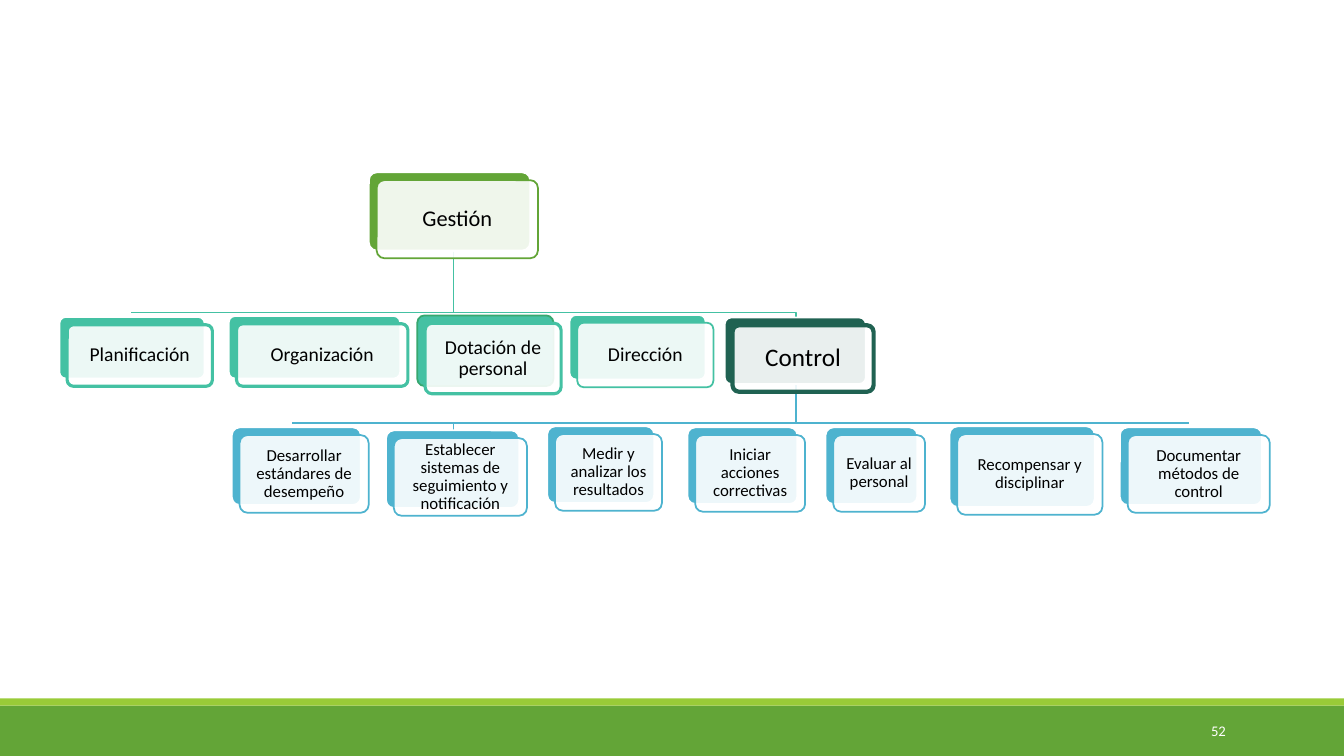
from lxml import etree
from pptx import Presentation
from pptx import util as u
from pptx.dml.color import RGBColor
from pptx.enum import shapes, text
from pptx.oxml import ns

WHITE = RGBColor(0xFF, 0xFF, 0xFF)
BLACK = RGBColor(0x00, 0x00, 0x00)
GREEN = RGBColor(0x63, 0xA5, 0x37)
LIME = RGBColor(0x99, 0xCB, 0x38)
TEAL = RGBColor(0x44, 0xC1, 0xA3)
DARK_TEAL = RGBColor(0x20, 0x62, 0x52)
EMERALD = RGBColor(0x37, 0xA7, 0x6F)
BLUE = RGBColor(0x4E, 0xB3, 0xCF)

# The slide is a grid of square steps, ten to the inch.
STEP = u.Inches(0.1)
COLUMNS, ROWS = 133.33, 75
CARD_SHIFT = 0.77  # offset of the front card from the back card
BEND_RISE = 0.65   # height of a branch's bend above its child

deck = Presentation()
deck.slide_width = round(COLUMNS * STEP)
deck.slide_height = ROWS * STEP
page = deck.slides.add_slide(deck.slide_layouts[6])


def add_block(kind, left, top, width, height, fill):
    """Add a filled shape without outline or shadow, measured in grid steps."""
    block = page.shapes.add_shape(
        kind, *(round(n * STEP) for n in (left, top, width, height)))
    block.shadow.inherit = False
    block.fill.solid()
    block.fill.fore_color.rgb = fill
    block.line.fill.background()
    return block


def write(box, words, size, color, align, inset):
    """Write one vertically centred paragraph in a shape."""
    frame = box.text_frame
    frame.word_wrap = True
    frame.vertical_anchor = text.MSO_ANCHOR.MIDDLE
    frame.margin_left = frame.margin_right = u.Inches(inset)
    frame.margin_top = frame.margin_bottom = u.Inches(inset)
    para = frame.paragraphs[0]
    para.alignment = align
    para.line_spacing = 0.9
    span = para.add_run()
    span.text = words
    span.font.name = "Calibri"
    span.font.size = u.Pt(size)
    span.font.color.rgb = color


# Footer band with the page number
for top, height, color in ((70, 5, GREEN), (69.3, 0.7, LIME)):
    add_block(shapes.MSO_SHAPE.RECTANGLE, 0, top, COLUMNS, height, color)
number = page.shapes.add_textbox(
    *(round(n * STEP) for n in (108.3, 70.6, 14.3, 4)))
write(number, "52", 10.5, WHITE, text.PP_ALIGN.RIGHT, 0.1)

# Cards: words, left, top, width, height, colour, back outline, front line width
root = ("Gestión", 36.6, 17.1, 16, 7.75, GREEN, WHITE, 1.25)
functions = [
    ("Planificación", 5.9, 31.45, 14.4, 6.1, TEAL, WHITE, 2.25),
    ("Organización", 22.7, 31.35, 17, 6.2, TEAL, WHITE, 2.25),
    ("Dotación de personal", 41.4, 31.3, 13.5, 7, TEAL, EMERALD, 2.25),
    ("Dirección", 56.5, 31.25, 13.5, 6.4, TEAL, WHITE, 1.25),
]
control = ("Control", 71.9, 31.5, 14, 6.6, DARK_TEAL, WHITE, 3)
tasks = [
    (words, left, top, width, height, BLUE, WHITE, 1.25)
    for words, left, top, width, height in (
        ("Desarrollar estándares de desempeño", 23, 42.4, 12.8, 7.7),
        ("Establecer sistemas de seguimiento y notificación",
         38.3, 42.7, 13.2, 7.7),
        ("Medir y analizar los resultados", 54.3, 42.3, 10.6, 7.6),
        ("Iniciar acciones correctivas", 68.2, 42.4, 10.9, 7.6),
        ("Evaluar al personal", 81.9, 42.4, 9.1, 7.6),
        ("Recompensar y disciplinar", 94.2, 42.3, 14.4, 8),
        ("Documentar métodos de control", 111.1, 42.4, 14.1, 7.7),
    )
]

# Branches run from the parent's bottom centre to each child's top centre
for parent, children, color in (
        (control, tasks, BLUE), (root, functions + [control], TEAL)):
    start_x = parent[1] + parent[3] / 2
    start_y = parent[2] + parent[4]
    for child in reversed(children):
        end_x, end_y = child[1] + child[3] / 2, child[2]
        bend_y = end_y - BEND_RISE
        outline = page.shapes.build_freeform(start_x, start_y, scale=STEP)
        outline.add_line_segments(
            [(start_x, bend_y), (end_x, bend_y), (end_x, end_y)], close=False)
        branch = outline.convert_to_shape()
        branch.shadow.inherit = False
        branch.fill.background()
        branch.line.color.rgb = color
        branch.line.width = u.Pt(1.25)

# Each card is a solid back with a translucent front that holds the words
for level, size, inset in (
        ([root], 16, 0.09), (functions, 14, 0.08),
        ([control], 18, 0.09), (tasks, 12, 0.07)):
    for words, left, top, width, height, color, back_line, weight in level:
        for shift, fill, edge, edge_weight in (
                (0, color, back_line, 1.25),
                (CARD_SHIFT, WHITE, color, weight)):
            card = add_block(shapes.MSO_SHAPE.ROUNDED_RECTANGLE,
                             left + shift, top + shift, width, height, fill)
            card.adjustments[0] = 0.1
            card.line.color.rgb = edge
            card.line.width = u.Pt(edge_weight)
        tint = card.fill._xPr.find(ns.qn("a:solidFill"))[0]
        etree.SubElement(tint, ns.qn("a:alpha"), val="90000")
        write(card, words, size, BLACK, text.PP_ALIGN.CENTER, inset)

deck.save("out.pptx")
